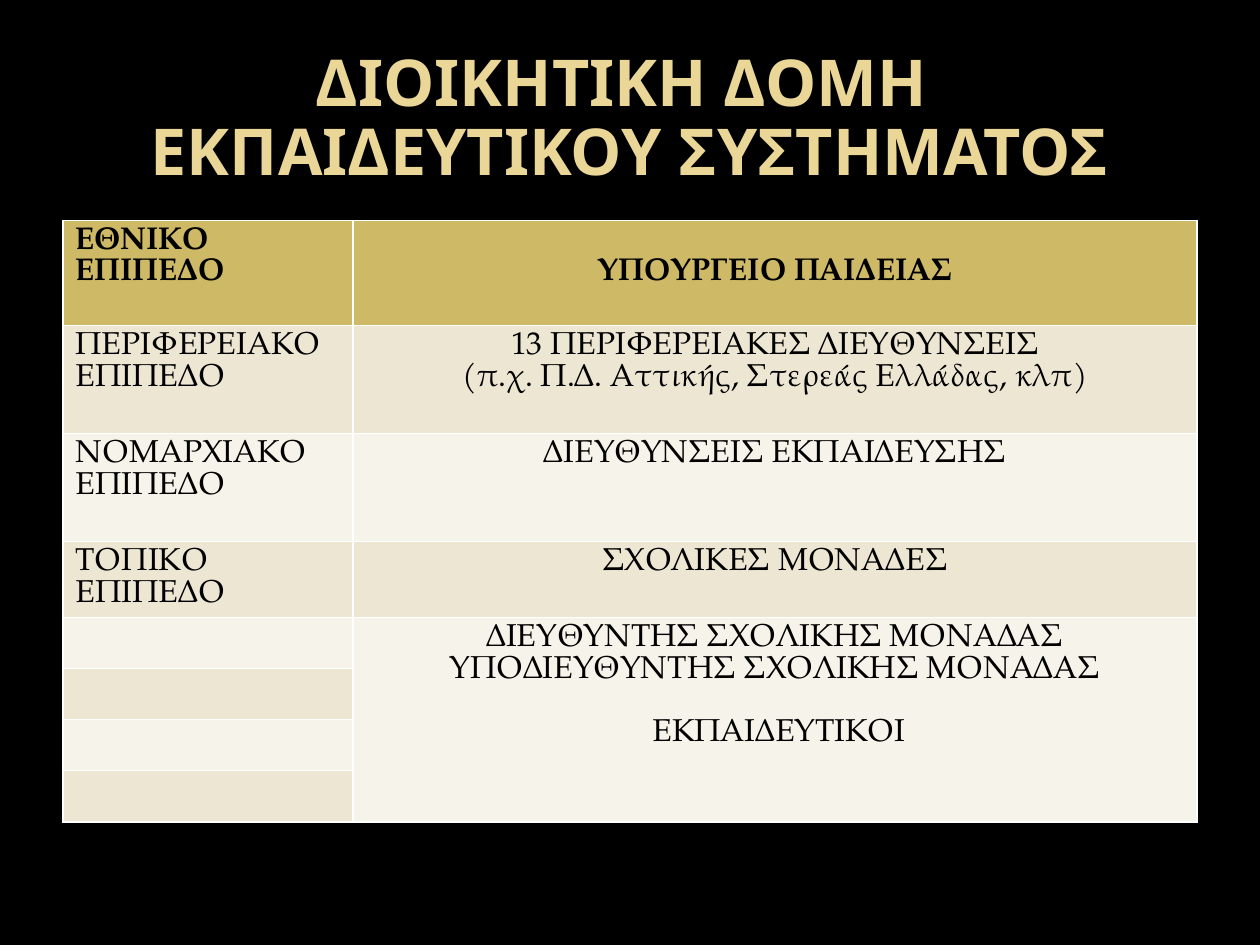
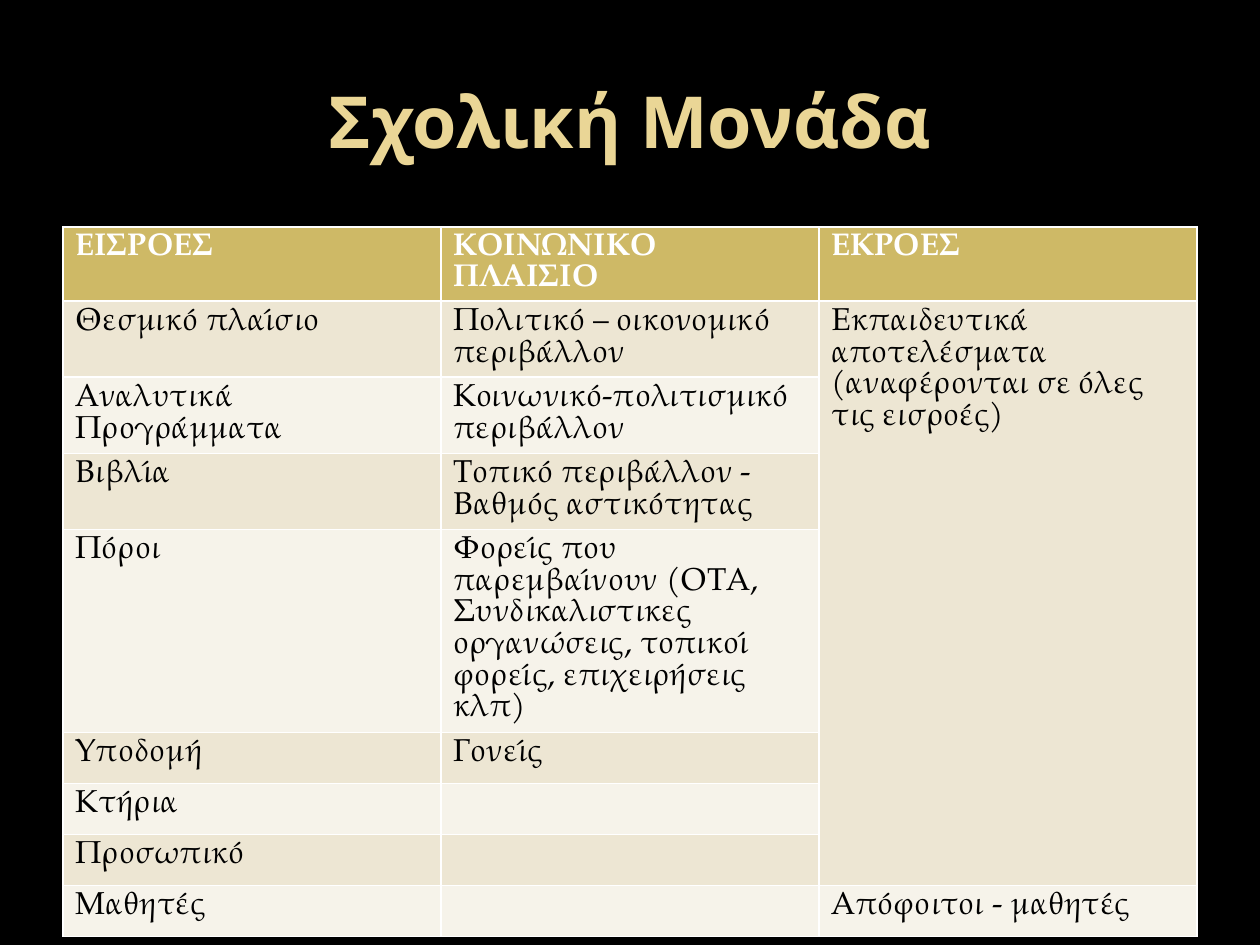
"""Build two Greek slides on how schools are run."""
from dataclasses import dataclass, field

from pptx import Presentation
from pptx.dml.color import RGBColor as Color
from pptx.enum.text import MSO_ANCHOR as Anchor, MSO_AUTO_SIZE as Fit, PP_ALIGN as Align
from pptx.presentation import Presentation as Deck
from pptx.slide import Slide
from pptx.table import _Cell as Cell
from pptx.util import Pt

BLACK = Color(0x00, 0x00, 0x00)
WHITE = Color(0xFF, 0xFF, 0xFF)
SAND = Color(0xEA, 0xD6, 0x96)
GOLD = Color(0xCE, 0xB9, 0x66)
BANDS = (Color(0xF6, 0xF3, 0xEA), Color(0xED, 0xE6, 0xD3))

HEAD_FONT = "Noto Sans"
BODY_FONT = "TeX Gyre Pagella"
BODY_SIZE = 18
INSET = 3.6
LEFT, WIDTH = 36, 648
LOW, PAIR, TRIO = 29.2, 43.4, 61.7


@dataclass(frozen=True)
class Span:
    col: int
    first: int
    last: int


@dataclass(frozen=True)
class Sheet:
    title: str
    size: float
    pitch: float
    top: float
    ink: Color
    cols: tuple[float, ...]
    aligns: tuple[Align, ...]
    highs: tuple[float, ...]
    rows: tuple[tuple[str, ...], ...]
    span: Span
    gaps: dict[tuple[int, int, int], float] = field(default_factory=dict)


LEVELS = Sheet(
    title="ΔΙΟΙΚΗΤΙΚΗ ΔΟΜΗ \vΕΚΠΑΙΔΕΥΤΙΚΟΥ ΣΥΣΤΗΜΑΤΟΣ",
    size=36.9,
    pitch=0.89,
    top=126,
    ink=BLACK,
    cols=(165.6, 482.4),
    aligns=(Align.LEFT, Align.CENTER),
    highs=(60, TRIO, TRIO, PAIR) + (LOW,) * 4,
    rows=(
        ("ΕΘΝΙΚΟ\nΕΠΙΠΕΔΟ", "ΥΠΟΥΡΓΕΙΟ ΠΑΙΔΕΙΑΣ"),
        ("ΠΕΡΙΦΕΡΕΙΑΚΟ ΕΠΙΠΕΔΟ",
         "13 ΠΕΡΙΦΕΡΕΙΑΚΕΣ ΔΙΕΥΘΥΝΣΕΙΣ\n(π.χ. Π.Δ. Αττικής, Στερεάς Ελλάδας, κλπ)"),
        ("ΝΟΜΑΡΧΙΑΚΟ ΕΠΙΠΕΔΟ", "ΔΙΕΥΘΥΝΣΕΙΣ ΕΚΠΑΙΔΕΥΣΗΣ"),
        ("ΤΟΠΙΚΟ ΕΠΙΠΕΔΟ", "ΣΧΟΛΙΚΕΣ ΜΟΝΑΔΕΣ"),
        ("", "ΔΙΕΥΘΥΝΤΗΣ ΣΧΟΛΙΚΗΣ ΜΟΝΑΔΑΣ\n"
             "ΥΠΟΔΙΕΥΘΥΝΤΗΣ ΣΧΟΛΙΚΗΣ ΜΟΝΑΔΑΣ\n ΕΚΠΑΙΔΕΥΤΙΚΟΙ"),
        ("", ""),
        ("", ""),
        ("", ""),
    ),
    span=Span(col=1, first=4, last=7),
    gaps={(0, 1, 0): BODY_SIZE, (4, 1, 2): BODY_SIZE},
)

SCHOOL = Sheet(
    title="Σχολική Μονάδα",
    size=41,
    pitch=1.0,
    top=129.6,
    ink=WHITE,
    cols=(WIDTH / 3,) * 3,
    aligns=(Align.LEFT,) * 3,
    highs=(42.3, PAIR, PAIR, PAIR, 116) + (LOW,) * 4,
    rows=(
        ("ΕΙΣΡΟΕΣ", "ΚΟΙΝΩΝΙΚΟ ΠΛΑΙΣΙΟ", "ΕΚΡΟΕΣ"),
        ("Θεσμικό πλαίσιο", "Πολιτικό – οικονομικό περιβάλλον",
         "Εκπαιδευτικά αποτελέσματα\n(αναφέρονται σε όλες\nτις εισροές)"),
        ("Αναλυτικά Προγράμματα", "Κοινωνικό-πολιτισμικό περιβάλλον", ""),
        ("Βιβλία", "Τοπικό περιβάλλον - Βαθμός αστικότητας", ""),
        ("Πόροι", "Φορείς που παρεμβαίνουν (ΟΤΑ, Συνδικαλιστικες οργανώσεις, "
                  "τοπικοί φορείς, επιχειρήσεις κλπ)", ""),
        ("Υποδομή", "Γονείς", ""),
        ("Κτήρια", "", ""),
        ("Προσωπικό", "", ""),
        ("Μαθητές", "", "Απόφοιτοι - μαθητές"),
    ),
    span=Span(col=2, first=1, last=7),
)


def add_title(slide: Slide, sheet: Sheet) -> None:
    title = slide.shapes.title
    title.left, title.top, title.width, title.height = Pt(LEFT), Pt(21.6), Pt(WIDTH), Pt(90)
    frame = title.text_frame
    frame.text = sheet.title
    frame.auto_size = Fit.NONE
    frame.word_wrap = True
    frame.vertical_anchor = Anchor.MIDDLE
    frame.margin_top, frame.margin_bottom = Pt(4), Pt(0)
    para = frame.paragraphs[0]
    para.alignment = Align.CENTER
    para.line_spacing = sheet.pitch
    font = para.font
    font.name, font.size, font.bold = HEAD_FONT, Pt(sheet.size), True
    font.color.rgb = SAND


def fill_cell(cell: Cell, sheet: Sheet, row: int, col: int) -> None:
    head = row == 0
    cell.text = sheet.rows[row][col]
    cell.fill.solid()
    cell.fill.fore_color.rgb = GOLD if head else BANDS[row % 2]
    cell.margin_top = Pt(INSET + sheet.gaps.get((row, col, 0), 0))
    for spot, para in enumerate(cell.text_frame.paragraphs):
        para.alignment = sheet.aligns[col]
        if spot:
            para.space_before = Pt(sheet.gaps.get((row, col, spot), 0))
        font = para.font
        font.name, font.size, font.bold = BODY_FONT, Pt(BODY_SIZE), head
        font.color.rgb = sheet.ink if head else BLACK


def add_grid(slide: Slide, sheet: Sheet) -> None:
    grid = slide.shapes.add_table(
        len(sheet.rows), len(sheet.cols),
        Pt(LEFT), Pt(sheet.top), Pt(WIDTH), Pt(sum(sheet.highs)),
    ).table
    for col, wide in zip(grid.columns, sheet.cols):
        col.width = Pt(wide)
    for row, high in zip(grid.rows, sheet.highs):
        row.height = Pt(high)
    for row, texts in enumerate(sheet.rows):
        for col in range(len(texts)):
            fill_cell(grid.cell(row, col), sheet, row, col)
    span = sheet.span
    grid.cell(span.first, span.col).merge(grid.cell(span.last, span.col))


def add_sheet(deck: Deck, sheet: Sheet) -> None:
    slide = deck.slides.add_slide(deck.slide_layouts.get_by_name("Title Only"))
    add_title(slide, sheet)
    add_grid(slide, sheet)


def main() -> None:
    deck = Presentation()
    deck.slide_width, deck.slide_height = Pt(720), Pt(540)
    back = deck.slide_master.background.fill
    back.solid()
    back.fore_color.rgb = BLACK
    for sheet in (LEVELS, SCHOOL):
        add_sheet(deck, sheet)
    deck.save("out.pptx")


if __name__ == "__main__":
    main()
